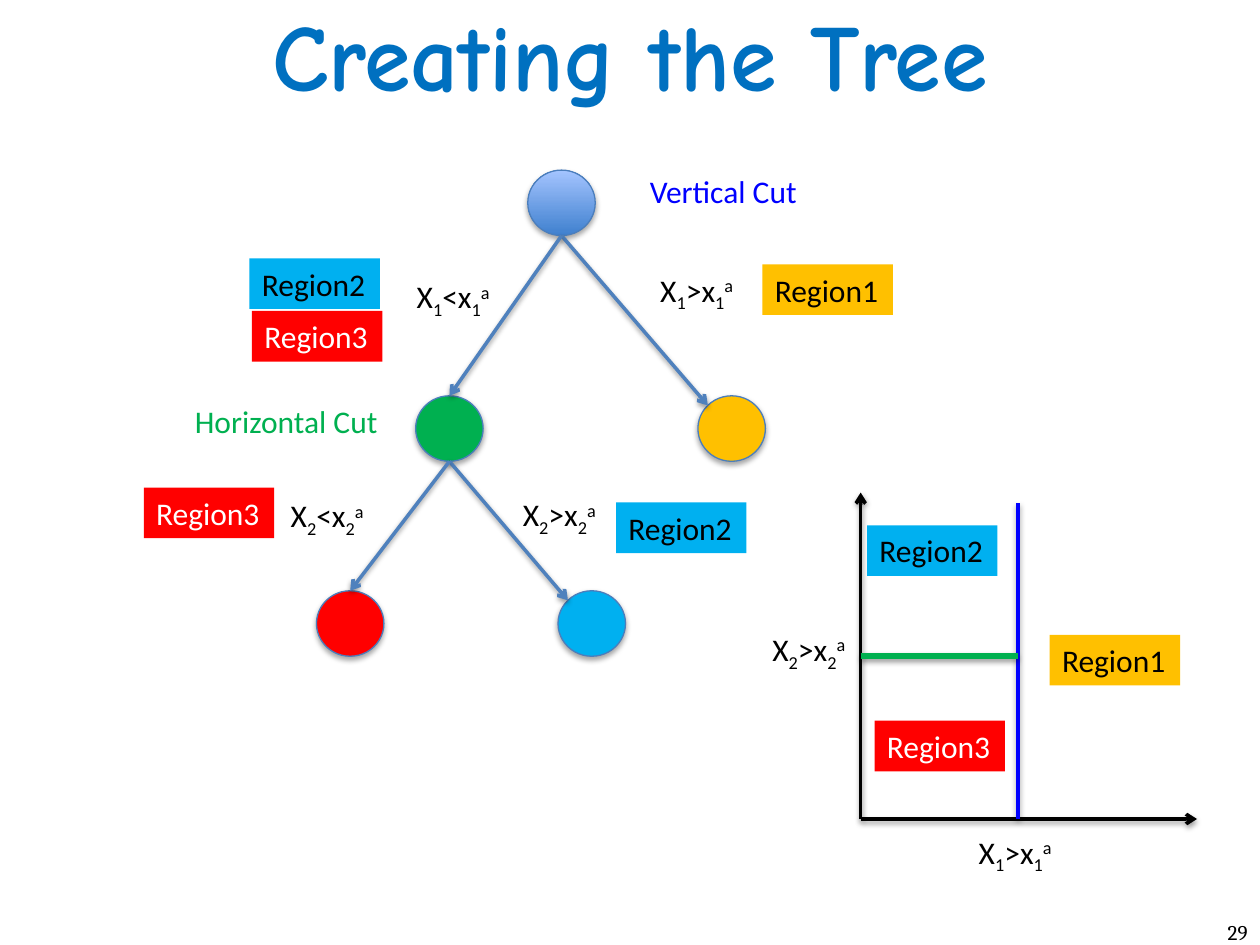
from math import sqrt

from lxml.etree import SubElement
from pptx import Presentation
from pptx.dml.color import RGBColor
from pptx.enum.shapes import MSO_CONNECTOR, MSO_SHAPE
from pptx.enum.text import MSO_ANCHOR, MSO_AUTO_SIZE, PP_ALIGN
from pptx.oxml.ns import qn
from pptx.util import Cm, Pt

NODE_WIDTH, NODE_HEIGHT = 1.36, 1.32
BLACK, WHITE, BLUE, GREEN = "000000", "FFFFFF", "0000FF", "00B050"
ORANGE, CYAN, RED, STEEL = "FFC000", "00B0F0", "FF0000", "4F81BD"
REGIONS = {1: (ORANGE, BLACK), 2: (CYAN, BLACK), 3: (RED, WHITE)}


def color(value):
    """Turn a hex string into a colour."""
    return RGBColor.from_string(value)


def add_shadow(shape, opacity, distance):
    """Give a shape a soft shadow that falls straight down."""
    effects = SubElement(shape._element.spPr, qn("a:effectLst"))
    shadow = SubElement(effects, qn("a:outerShdw"), blurRad=str(Pt(3.1)),
                        dist=str(Pt(distance)), dir="5400000", rotWithShape="0")
    shade = SubElement(shadow, qn("a:srgbClr"), val=BLACK)
    SubElement(shade, qn("a:alpha"), val=str(opacity * 1000))


def write_text(frame, text, size=18, font="Calibri", fill=BLACK, bold=False,
               align=PP_ALIGN.LEFT):
    """Write a string, or pairs of string and baseline percent, into a frame."""
    paragraph = frame.paragraphs[0]
    paragraph.alignment = align
    for part, baseline in [(text, 0)] if isinstance(text, str) else text:
        run = paragraph.add_run()
        run.text = part
        run.font.size = Pt(size)
        run.font.name = font
        run.font.bold = bold
        run.font.color.rgb = color(fill)
        if baseline:
            run._r.get_or_add_rPr().set("baseline", str(baseline * 1000))


def add_label(slide, text, left, top, width, **text_format):
    """Add a one-line text box that fits its text."""
    label = slide.shapes.add_textbox(Cm(left), Cm(top), Cm(width), Cm(1.02))
    label.text_frame.word_wrap = False
    label.text_frame.auto_size = MSO_AUTO_SIZE.SHAPE_TO_FIT_TEXT
    write_text(label.text_frame, text, **text_format)
    return label


def add_region(slide, number, left, top):
    """Add the filled label of a region."""
    background, foreground = REGIONS[number]
    label = add_label(slide, f"Region{number}", left, top, 2.63, fill=foreground)
    label.fill.solid()
    label.fill.fore_color.rgb = color(background)


def add_condition(slide, axis, sign, left, top):
    """Add a condition that compares a variable with its threshold."""
    index = (str(axis), -25)
    parts = [("X", 0), index, (f"{sign}x", 0), index, ("a", 30)]
    add_label(slide, parts, left, top, 2.08)


def add_node(slide, left, top, fill=None):
    """Add a tree node, with a blue gradient if no fill is given."""
    node = slide.shapes.add_shape(MSO_SHAPE.OVAL, Cm(left), Cm(top),
                                  Cm(NODE_WIDTH), Cm(NODE_HEIGHT))
    if fill:
        node.fill.solid()
        node.fill.fore_color.rgb = color(fill)
    else:
        node.fill.gradient()
        node.fill.gradient_angle = 90
        for stop, shade in zip(node.fill.gradient_stops, ("3F80CE", "A4C4FF")):
            stop.color.rgb = color(shade)
    node.line.color.rgb = color("4B7EBC")
    node.line.width = Pt(0.75)
    add_shadow(node, 35, 1.8)
    return node


def add_line(slide, start, end, fill, width=2, arrow=False):
    """Add a straight line between two points."""
    line = slide.shapes.add_connector(MSO_CONNECTOR.STRAIGHT, *start, *end)
    line.line.color.rgb = color(fill)
    line.line.width = Pt(width)
    if arrow:
        SubElement(line.line._get_or_add_ln(), qn("a:tailEnd"), type="arrow")
    add_shadow(line, 38, 1.6)
    return line


def add_branches(slide, parent, left_child, right_child):
    """Join a node to the top of one child and the upper left of the other."""
    start = parent.left + parent.width // 2, parent.top + parent.height
    inset = (1 - sqrt(0.5)) / 2
    corner = (int(right_child.left + inset * right_child.width),
              int(right_child.top + inset * right_child.height))
    add_line(slide, start, corner, STEEL, arrow=True)
    add_line(slide, start, start, STEEL, arrow=True).end_connect(left_child, 0)


def add_tree(slide):
    """Draw the decision tree with its labels."""
    root = add_node(slide, 10.64, 3.43)
    green = add_node(slide, 8.38, 7.98, GREEN)
    orange = add_node(slide, 14.07, 7.98, ORANGE)
    red = add_node(slide, 6.38, 11.91, RED)
    cyan = add_node(slide, 11.25, 11.91, CYAN)
    add_branches(slide, root, green, orange)
    add_branches(slide, green, red, cyan)
    for condition in ((1, ">", 13.06, 5.33), (1, "<", 8.15, 5.46),
                      (2, ">", 10.29, 9.86), (2, "<", 5.61, 9.88)):
        add_condition(slide, *condition)
    for region in ((1, 15.37, 5.33), (2, 5.03, 5.21), (3, 5.08, 6.27),
                   (2, 12.42, 10.13), (3, 2.9, 9.83)):
        add_region(slide, *region)
    add_label(slide, "Vertical Cut", 12.85, 3.35, 3.51, fill=BLUE)
    add_label(slide, "Horizontal Cut", 3.68, 7.98, 4.24, fill=GREEN)


def add_plot(slide):
    """Draw the plane that the two cuts divide into regions."""
    left, bottom, cut_x, cut_y = Cm(17.35), Cm(16.51), Cm(20.52), Cm(13.23)
    add_line(slide, (left, bottom), (Cm(24.13), bottom), BLACK, arrow=True)
    add_line(slide, (left, bottom), (left, Cm(9.93)), BLACK, arrow=True)
    add_line(slide, (cut_x, bottom), (cut_x, Cm(10.13)), BLUE)
    add_line(slide, (left, cut_y), (cut_x, cut_y), GREEN, width=3.5)
    add_condition(slide, 2, ">", 15.32, 12.57)
    add_condition(slide, 1, ">", 19.48, 16.66)
    for region in ((1, 21.16, 12.8), (2, 17.48, 10.59), (3, 17.63, 14.53)):
        add_region(slide, *region)


def add_title(slide, text):
    """Place and format the title."""
    title = slide.shapes.title
    title.left, title.top, title.width, title.height = Cm(0), Cm(0), Cm(25.4), Cm(2.16)
    title.text_frame.vertical_anchor = MSO_ANCHOR.MIDDLE
    title.text_frame.auto_size = MSO_AUTO_SIZE.NONE
    write_text(title.text_frame, text, size=54, font="Comic Neue", fill="0070C0",
               bold=True, align=PP_ALIGN.CENTER)


def add_page_number(slide, number):
    """Add the page number in the lower right corner."""
    box = slide.shapes.add_textbox(Cm(20.12), Cm(18.42), Cm(5.28), Cm(0.63))
    box.text_frame.word_wrap = True
    write_text(box.text_frame, number, size=12, font="Cambria", align=PP_ALIGN.RIGHT)


def main():
    """Build the slide and save it."""
    presentation = Presentation()
    presentation.slide_width, presentation.slide_height = Cm(25.4), Cm(19.05)
    slide = presentation.slides.add_slide(presentation.slide_layouts[5])
    add_title(slide, "Creating the Tree")
    add_tree(slide)
    add_plot(slide)
    add_page_number(slide, "29")
    presentation.save("out.pptx")


if __name__ == "__main__":
    main()
